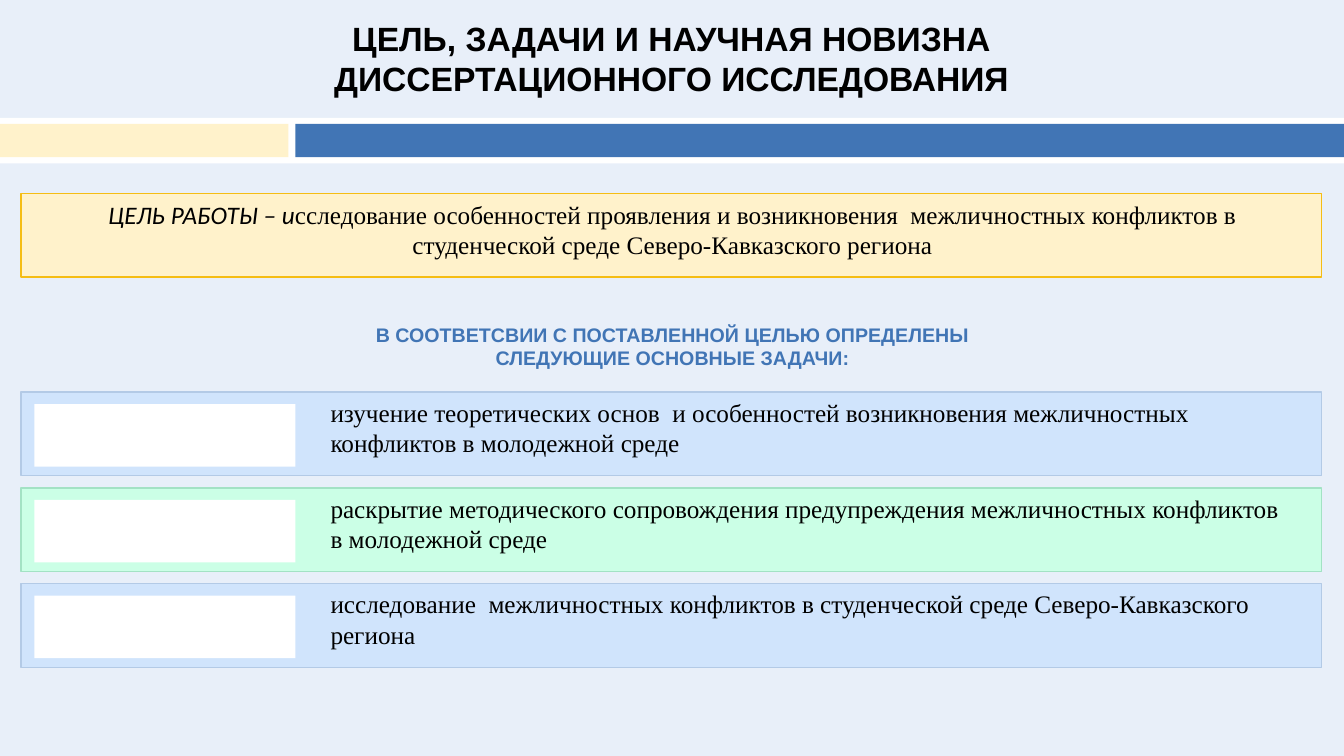
from dataclasses import dataclass

import pptx
import pptx.dml.color
import pptx.enum.shapes
import pptx.enum.text
import pptx.slide
import pptx.util

PX = 9144  # 100 px to the inch
ALIGN = pptx.enum.text.PP_ALIGN


@dataclass(frozen=True)
class Theme:
    background: str = "E8EFF9"
    white: str = "FFFFFF"
    text: str = "000000"
    accent: str = "4175B5"
    cream: str = "FFF2CB"
    gold: str = "F5BD14"
    blue: str = "D0E4FC"
    blue_line: str = "B3CAE6"
    green: str = "CBFFE6"
    green_line: str = "A3E2C4"
    title_size: int = 24
    body_size: int = 18
    heading_size: int = 14
    heading_font: str = "Arial"
    lead_font: str = "Calibri"
    body_font: str = "Times New Roman"


THEME = Theme()


@dataclass(frozen=True)
class Box:
    left: int
    top: int
    width: int
    height: int

    def emu(self) -> list[int]:
        return [v * PX for v in (self.left, self.top, self.width, self.height)]


@dataclass(frozen=True)
class Run:
    text: str
    font: str = THEME.body_font
    italic: bool = False


@dataclass(frozen=True)
class Task:
    lines: list[str]
    fill: str
    line: str
    text_width: int = 993
    text_height: int = 71


TASKS = [
    Task(["изучение теоретических основ  и особенностей возникновения "
          "межличностных конфликтов в молодежной среде"],
         THEME.blue, THEME.blue_line),
    Task(["раскрытие методического сопровождения предупреждения межличностных конфликтов",
          "в молодежной среде"],
         THEME.green, THEME.green_line, text_width=1014, text_height=101),
    Task(["исследование  межличностных конфликтов в студенческой среде "
          "Северо-Кавказского региона"],
         THEME.blue, THEME.blue_line),
]
TASK_TOP = 389
TASK_STEP = 95


def rgb(color: str) -> pptx.dml.color.RGBColor:
    return pptx.dml.color.RGBColor.from_string(color)


def add_rect(s: pptx.slide.Slide, box: Box, fill: str, line: str | None = None) -> None:
    sp = s.shapes.add_shape(pptx.enum.shapes.MSO_SHAPE.RECTANGLE, *box.emu())
    sp.shadow.inherit = False
    sp.fill.solid()
    sp.fill.fore_color.rgb = rgb(fill)
    if line is None:
        sp.line.fill.background()
    else:
        sp.line.color.rgb = rgb(line)
        sp.line.width = pptx.util.Pt(1)


def add_text(s: pptx.slide.Slide, box: Box, paragraphs: list[list[Run]], *,
             size: int = THEME.body_size, color: str = THEME.text, bold: bool = False,
             align: ALIGN = ALIGN.LEFT, wrap: bool = True) -> None:
    tf = s.shapes.add_textbox(*box.emu()).text_frame
    tf.word_wrap = wrap
    tf.auto_size = pptx.enum.text.MSO_AUTO_SIZE.SHAPE_TO_FIT_TEXT
    for i, runs in enumerate(paragraphs):
        p = tf.add_paragraph() if i else tf.paragraphs[0]
        p.alignment = align
        for run in runs:
            r = p.add_run()
            r.text = run.text
            r.font.name = run.font
            r.font.size = pptx.util.Pt(size)
            r.font.color.rgb = rgb(color)
            r.font.bold = bold
            r.font.italic = run.italic


def add_heading(s: pptx.slide.Slide, box: Box, lines: list[str], size: int, color: str) -> None:
    add_text(s, box, [[Run(line, THEME.heading_font)] for line in lines],
             size=size, color=color, bold=True, align=ALIGN.CENTER, wrap=False)


def add_header_band(s: pptx.slide.Slide) -> None:
    add_rect(s, Box(0, 117, 1333, 45), THEME.white)
    add_rect(s, Box(293, 123, 1040, 33), THEME.accent)
    add_rect(s, Box(0, 123, 286, 33), THEME.cream)


def add_goal(s: pptx.slide.Slide) -> None:
    add_rect(s, Box(21, 192, 1290, 83), THEME.cream, THEME.gold)
    add_text(s, Box(42, 193, 1250, 71), [[
        Run("ЦЕЛЬ РАБОТЫ – и", THEME.lead_font, italic=True),
        Run("сследование особенностей проявления и возникновения  межличностных "
            "конфликтов в студенческой среде Северо-Кавказского региона"),
    ]], align=ALIGN.CENTER)


def add_task(s: pptx.slide.Slide, task: Task, top: int) -> None:
    add_rect(s, Box(21, top, 1290, 83), task.fill, task.line)
    add_text(s, Box(318, top, task.text_width, task.text_height),
             [[Run(line)] for line in task.lines])
    add_rect(s, Box(34, top + 12, 259, 62), THEME.white)


def main() -> None:
    prs = pptx.Presentation()
    prs.slide_width, prs.slide_height = 1333 * PX, 750 * PX
    s = prs.slides.add_slide(prs.slide_layouts[6])
    s.background.fill.solid()
    s.background.fill.fore_color.rgb = rgb(THEME.background)

    add_heading(s, Box(318, 13, 696, 91),
                ["ЦЕЛЬ, ЗАДАЧИ И НАУЧНАЯ НОВИЗНА", "ДИССЕРТАЦИОННОГО ИССЛЕДОВАНИЯ"],
                THEME.title_size, THEME.text)
    add_header_band(s)
    add_goal(s)
    add_heading(s, Box(360, 315, 614, 57),
                ["В СООТВЕТСВИИ С ПОСТАВЛЕННОЙ ЦЕЛЬЮ ОПРЕДЕЛЕНЫ",
                 "СЛЕДУЮЩИЕ ОСНОВНЫЕ ЗАДАЧИ:"],
                THEME.heading_size, THEME.accent)
    for i, task in enumerate(TASKS):
        add_task(s, task, TASK_TOP + i * TASK_STEP)

    prs.save("out.pptx")


if __name__ == "__main__":
    main()
